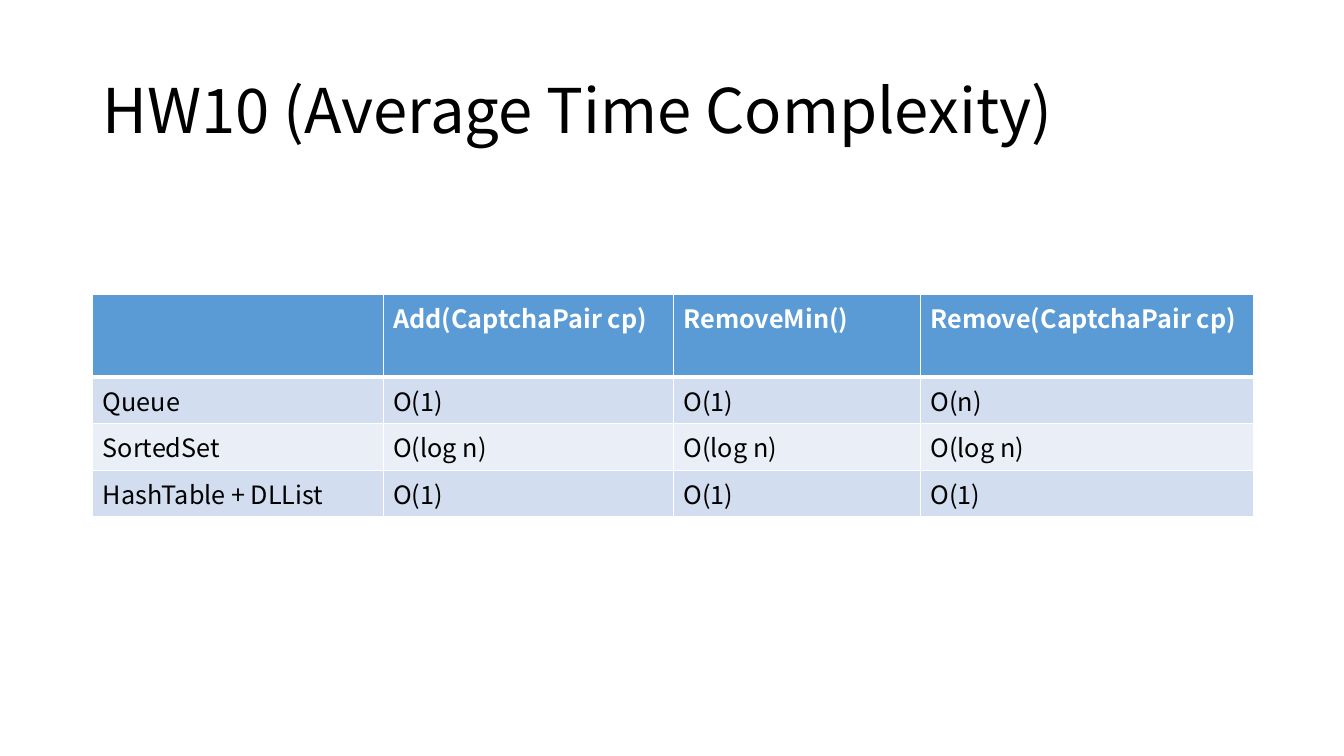
from lxml import etree
from pptx import Presentation
from pptx import util as u
from pptx.dml.color import RGBColor
from pptx.enum import text
from pptx.oxml import ns

COLORS = {
    "ink": "000000",
    "paper": "FFFFFF",
    "header": "5B9BD5",
    "odd_row": "D2DEEF",
    "even_row": "EAEFF7",
}
TITLE_FORMAT = {"size": u.Pt(44), "bold": False}
HEADER_FORMAT = {"size": u.Pt(18), "bold": True}
BODY_FORMAT = {"size": u.Pt(18), "bold": False}
COLUMN_WIDTHS = [2.88, 2.88, 2.45, 3.3]
ROW_HEIGHTS = [0.82, 0.46, 0.46, 0.46]
COMPLEXITIES = [
    ["", "Add(CaptchaPair cp)", "RemoveMin()", "Remove(CaptchaPair cp)"],
    ["Queue", "O(1)", "O(1)", "O(n)"],
    ["SortedSet", "O(log n)", "O(log n)", "O(log n)"],
    ["HashTable + DLList", "O(1)", "O(1)", "O(1)"],
]


class SlideBuilder:
    font_name = "Noto Sans CJK KR"

    def __init__(self, presentation):
        self.slide = presentation.slides.add_slide(presentation.slide_layouts[5])

    def format_font(self, font, color, values):
        for name, value in {"name": self.font_name, **values}.items():
            setattr(font, name, value)
        font.color.rgb = RGBColor.from_string(COLORS[color])

    def title(self, wording, left, top, width, height):
        shape = self.slide.shapes.title
        box = {"left": left, "top": top, "width": width, "height": height}
        for name, value in box.items():
            setattr(shape, name, u.Inches(value))
        shape.text_frame.text = wording
        shape.text_frame.vertical_anchor = text.MSO_ANCHOR.MIDDLE
        paragraph = shape.text_frame.paragraphs[0]
        paragraph.alignment = text.PP_ALIGN.LEFT
        paragraph.line_spacing = 0.9
        self.format_font(paragraph.runs[0].font, "ink", TITLE_FORMAT)

    def border(self, cell, bottom_width, top_width):
        properties = cell._tc.get_or_add_tcPr()
        widths = {"lnL": 1, "lnR": 1, "lnT": top_width, "lnB": bottom_width}
        for index, (tag, width) in enumerate(widths.items()):
            line = etree.Element(ns.qn(f"a:{tag}"), w=str(u.Pt(width)))
            fill = etree.SubElement(line, ns.qn("a:solidFill"))
            etree.SubElement(fill, ns.qn("a:srgbClr"), val=COLORS["paper"])
            properties.insert(index, line)

    def cell(self, cell, wording, row):
        fill = "header" if row == 0 else "odd_row" if row % 2 else "even_row"
        cell.fill.solid()
        cell.fill.fore_color.rgb = RGBColor.from_string(COLORS[fill])
        cell.text = wording
        self.format_font(
            cell.text_frame.paragraphs[0].font,
            "ink" if row else "paper",
            BODY_FORMAT if row else HEADER_FORMAT,
        )
        for run in cell.text_frame.paragraphs[0].runs:
            self.format_font(
                run.font,
                "ink" if row else "paper",
                BODY_FORMAT if row else HEADER_FORMAT,
            )
        self.border(cell, 1 if row else 3, 3 if row == 1 else 1)

    def table(self, rows, left, top, widths, heights):
        box = [u.Inches(value) for value in (left, top, sum(widths), sum(heights))]
        table = self.slide.shapes.add_table(len(rows), len(widths), *box).table
        for column, width in zip(table.columns, widths):
            column.width = u.Inches(width)
        for row, height in zip(table.rows, heights):
            row.height = u.Inches(height)
        for row_index, row in enumerate(rows):
            for column_index, wording in enumerate(row):
                self.cell(table.cell(row_index, column_index), wording, row_index)


def main():
    presentation = Presentation()
    presentation.slide_width = u.Inches(13.33)
    presentation.slide_height = u.Inches(7.5)
    builder = SlideBuilder(presentation)
    builder.title("HW10 (Average Time Complexity)", 0.92, 0.4, 11.5, 1.45)
    builder.table(COMPLEXITIES, 0.92, 2.92, COLUMN_WIDTHS, ROW_HEIGHTS)
    presentation.save("out.pptx")


if __name__ == "__main__":
    main()
